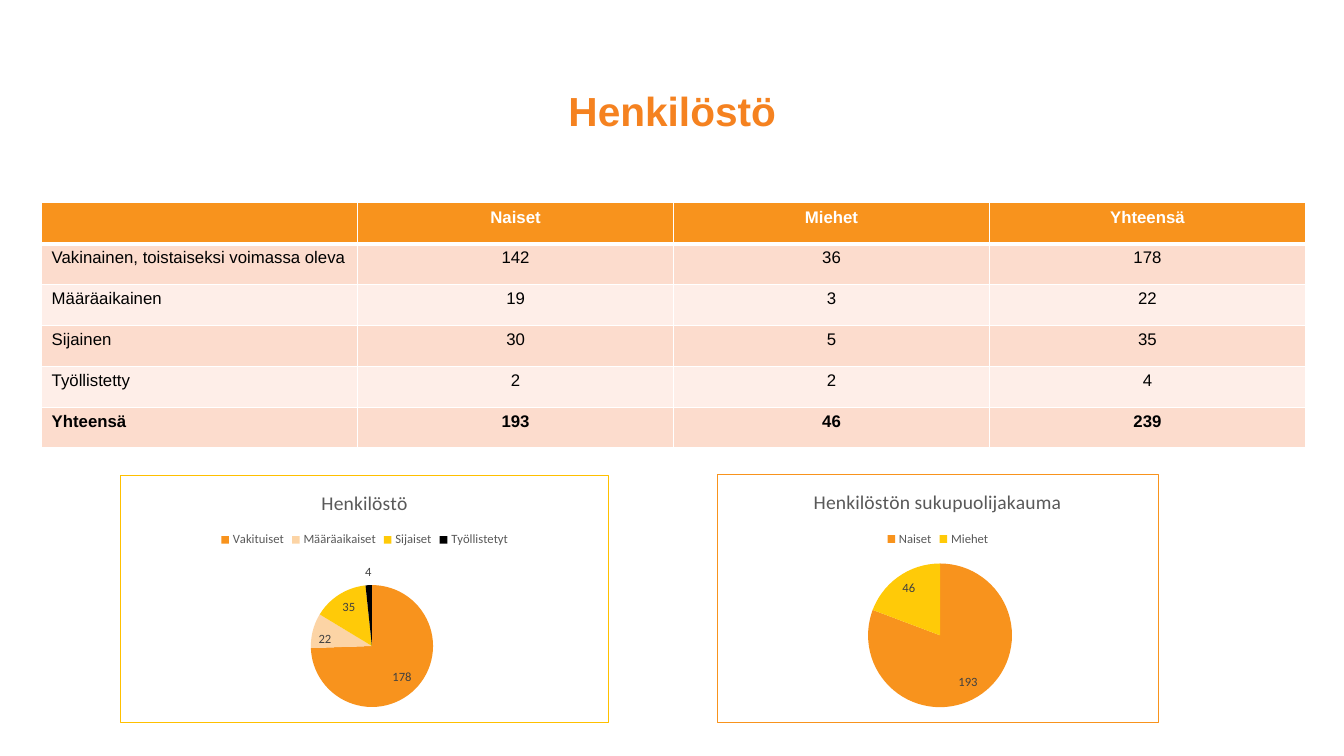
from lxml.etree import SubElement
from pptx import Presentation
from pptx.chart.data import CategoryChartData
from pptx.dml.color import RGBColor
from pptx.enum.chart import XL_CHART_TYPE as ChartType
from pptx.enum.chart import XL_LABEL_POSITION as LabelPosition
from pptx.enum.chart import XL_LEGEND_POSITION as LegendPosition
from pptx.enum.text import MSO_ANCHOR as Anchor
from pptx.enum.text import PP_ALIGN as Align
from pptx.oxml import parse_xml
from pptx.oxml.ns import nsdecls, qn
from pptx.util import Cm, Pt

COLORS = {
    "title": "F58220", "orange": "F8931D", "peach": "FCD4A5", "yellow": "FFCA08",
    "gold": "FFC000", "black": "000000", "white": "FFFFFF", "band_dark": "FCDCCD",
    "band_light": "FEEEE8", "caption": "595959", "value": "404040",
}
STAFF_ROWS = [
    ("", "Naiset", "Miehet", "Yhteensä"),
    ("Vakinainen, toistaiseksi voimassa oleva", "142", "36", "178"),
    ("Määräaikainen", "19", "3", "22"),
    ("Sijainen", "30", "5", "35"),
    ("Työllistetty", "2", "2", "4"),
    ("Yhteensä", "193", "46", "239"),
]
STAFF_TYPES = [
    ("Vakituiset", 178, "orange"), ("Määräaikaiset", 22, "peach"),
    ("Sijaiset", 35, "yellow"), ("Työllistetyt", 4, "black"),
]
GENDERS = [("Naiset", 193, "orange"), ("Miehet", 46, "yellow")]


class StaffSlide:
    heading_font = "Arial"
    chart_font = "Calibri"

    def __init__(self, deck):
        self.slide = deck.slides.add_slide(deck.slide_layouts[5])

    def style(self, font, name, size, color, bold=False):
        font.name, font.size, font.bold = name, Pt(size), bold
        font.color.rgb = RGBColor.from_string(COLORS[color])

    def title(self, text, left, top, width, height):
        heading = self.slide.shapes.title
        heading.left, heading.top = Cm(left), Cm(top)
        heading.width, heading.height = Cm(width), Cm(height)
        heading.text_frame.text = text
        heading.text_frame.vertical_anchor = Anchor.MIDDLE
        line = heading.text_frame.paragraphs[0]
        line.alignment, line.line_spacing = Align.CENTER, 0.9
        self.style(line.runs[0].font, self.heading_font, 29, "title", True)

    def cell_borders(self, cell, top, bottom):
        """Draw white borders; must come before the cell's fill."""
        properties = cell._tc.get_or_add_tcPr()
        for side, points in (("L", 1), ("R", 1), ("T", top), ("B", bottom)):
            border = SubElement(properties, qn(f"a:ln{side}"), w=str(Pt(points)))
            fill = SubElement(border, qn("a:solidFill"))
            SubElement(fill, qn("a:srgbClr"), val=COLORS["white"])

    def table(self, rows, left, top, width, height):
        grid = self.slide.shapes.add_table(
            len(rows), len(rows[0]), Cm(left), Cm(top), Cm(width), Cm(height)).table
        last = len(rows) - 1
        for r, row in enumerate(rows):
            band = "orange" if r == 0 else "band_dark" if r % 2 else "band_light"
            for c, text in enumerate(row):
                cell = grid.cell(r, c)
                self.cell_borders(cell, 3 if r == 1 else 1, 3 if r == 0 else 1)
                cell.fill.solid()
                cell.fill.fore_color.rgb = RGBColor.from_string(COLORS[band])
                cell.text_frame.text = text
                entry = cell.text_frame.paragraphs[0]
                entry.alignment = Align.CENTER if c else Align.LEFT
                self.style(entry.font, self.heading_font, 12,
                           "black" if r else "white", r in (0, last))
                for run in entry.runs:
                    self.style(run.font, self.heading_font, 12,
                               "black" if r else "white", r in (0, last))

    def pie(self, caption, slices, box, border, plot_area, outside=()):
        """Add a pie; plot_area is x, y, w, h as shares of the chart."""
        names, values, colors = zip(*slices)
        data = CategoryChartData()
        data.categories = names
        data.add_series("Series 1", values)
        chart = self.slide.shapes.add_chart(
            ChartType.PIE, *(Cm(length) for length in box), data).chart
        self.style(chart.font, self.chart_font, 10, "black")

        chart.has_title = True
        chart.chart_title.include_in_layout = False
        chart.chart_title.text_frame.text = caption
        caption_run = chart.chart_title.text_frame.paragraphs[0].runs[0]
        self.style(caption_run.font, self.chart_font, 14, "caption")

        chart.has_legend = True
        chart.legend.position = LegendPosition.TOP
        chart.legend.include_in_layout = False
        self.style(chart.legend.font, self.chart_font, 9, "caption")

        chart.plots[0].vary_by_categories = True
        series = chart.plots[0].series[0]
        labels = series.data_labels
        labels.show_value = True
        labels.position = LabelPosition.INSIDE_END
        self.style(labels.font, self.chart_font, 9, "value")
        for i, color in enumerate(colors):
            point = series.points[i]
            point.format.fill.solid()
            point.format.fill.fore_color.rgb = RGBColor.from_string(COLORS[color])
            if names[i] in outside:
                self.style(point.data_label.font, self.chart_font, 9, "value")
                point.data_label.position = LabelPosition.OUTSIDE_END
        self.chart_frame(chart, border, plot_area)

    def chart_frame(self, chart, border, plot_area):
        """Outline the chart and fix the place of its plot."""
        root = chart._chartSpace
        root.find(qn("c:chart")).addnext(parse_xml(
            f'<c:spPr {nsdecls("c", "a")}><a:solidFill><a:srgbClr val="{COLORS["white"]}"/>'
            f'</a:solidFill><a:ln w="{Pt(0.75)}"><a:solidFill>'
            f'<a:srgbClr val="{COLORS[border]}"/></a:solidFill></a:ln></c:spPr>'))
        plot = root.find(".//" + qn("c:plotArea"))
        for automatic in plot.findall(qn("c:layout")):
            plot.remove(automatic)
        shares = "".join(f'<c:{key} val="{share}"/>'
                         for key, share in zip("xywh", plot_area))
        plot.insert(0, parse_xml(
            f'<c:layout {nsdecls("c")}><c:manualLayout><c:layoutTarget val="inner"/>'
            f'<c:xMode val="edge"/><c:yMode val="edge"/>{shares}'
            '</c:manualLayout></c:layout>'))


def main():
    deck = Presentation()
    deck.slide_width, deck.slide_height = Cm(33.87), Cm(19.05)
    staff = StaffSlide(deck)
    staff.title("Henkilöstö", 2.34, 1.02, 29.21, 3.68)
    staff.table(STAFF_ROWS, 1.05, 5.11, 31.85, 6.18)
    staff.pie("Henkilöstön sukupuolijakauma", GENDERS, (18.06, 11.94, 11.15, 6.27),
              "orange", (0.34, 0.36, 0.33, 0.58))
    staff.pie("Henkilöstö", STAFF_TYPES, (3.02, 11.96, 12.34, 6.27),
              "gold", (0.39, 0.44, 0.25, 0.5), outside=("Työllistetyt",))
    deck.save("out.pptx")


if __name__ == "__main__":
    main()
